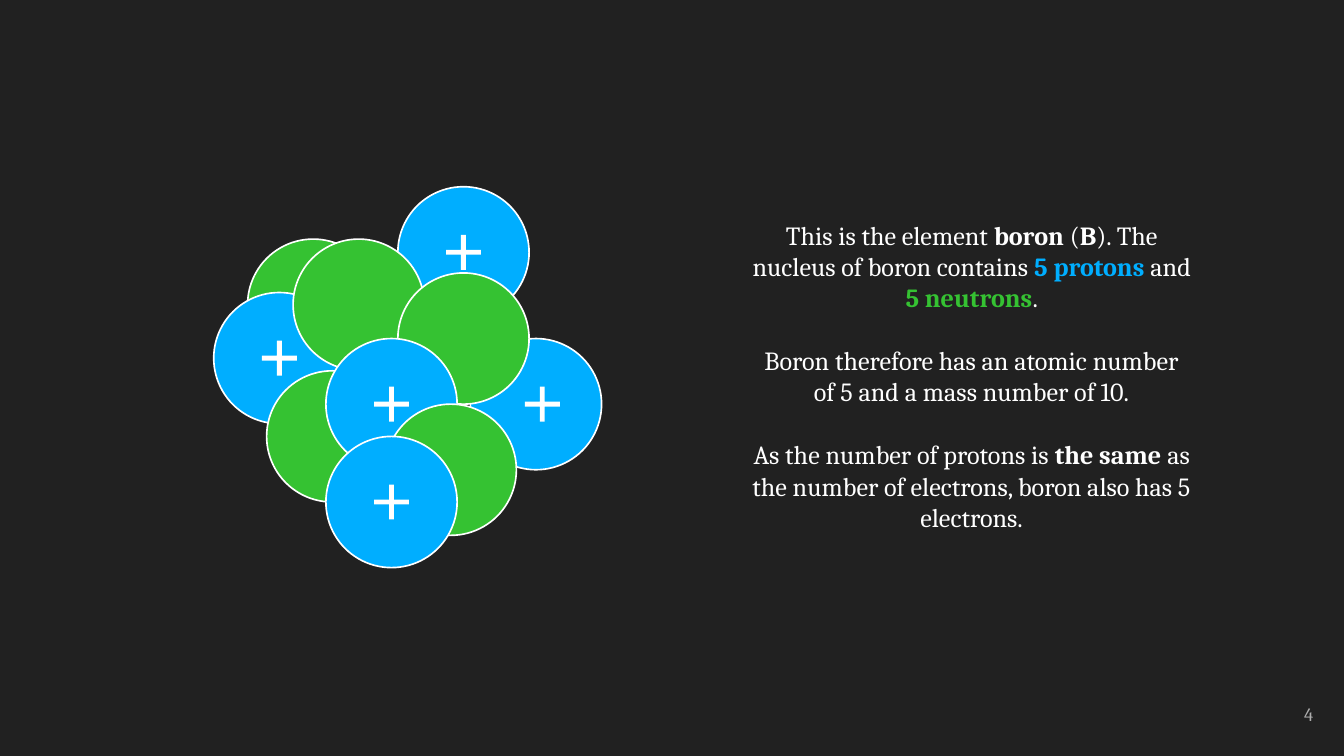
"""Build the slide that explains the nucleus of boron."""
from pptx import Presentation
from pptx import util as u
from pptx.dml import color
from pptx.enum import shapes, text

FONT = "Cambria"
WHITE, GREY, DARK = "FFFFFF", "ADADAD", "212121"
PROTON, NEUTRON = "00AEFF", "35C232"
DIAMETER, PLUS = 2.48, 0.66

PARTICLES = [
    (0.64, 0.99, NEUTRON, 0),
    (3.48, 0, PROTON, 0),
    (0, 2, PROTON, 0),
    (1.5, 0.99, NEUTRON, 0),
    (1, 3.48, NEUTRON, 0),
    (4.85, 2.87, PROTON, 0.12),
    (3.48, 1.63, NEUTRON, 0),
    (2.12, 2.87, PROTON, 0),
    (3.24, 4.11, NEUTRON, 0),
    (2.12, 4.72, PROTON, 0),
]

PARAGRAPHS = [
    [("This is the element ", WHITE, False), ("boron ", WHITE, True),
     ("(", WHITE, False), ("B", WHITE, True),
     ("). The nucleus of boron contains ", WHITE, False),
     ("5 protons ", PROTON, True), ("and ", WHITE, False),
     ("5 neutrons", NEUTRON, True), (".", WHITE, False)],
    [("Boron therefore has an atomic number of 5 and a mass number of 10.",
      WHITE, False)],
    [("As the number of protons is ", WHITE, False),
     ("the same ", WHITE, True),
     ("as the number of electrons, boron also has 5 electrons.",
      WHITE, False)],
]


def rgb(value):
    """Turn a hex string into a colour."""
    return color.RGBColor.from_string(value)


def add_solid(s, kind, x, y, size, fill):
    """Add a filled square-sized shape without line or shadow."""
    sp = s.shapes.add_shape(kind, u.Cm(x), u.Cm(y), u.Cm(size), u.Cm(size))
    sp.shadow.inherit = False
    sp.fill.solid()
    sp.fill.fore_color.rgb = rgb(fill)
    sp.line.fill.background()
    return sp


def add_nucleus(s, left, top):
    """Stack the particles from back to front, with a plus on each proton."""
    inset = (DIAMETER - PLUS) / 2
    for dx, dy, fill, shift in PARTICLES:
        x, y = left + dx, top + dy
        sp = add_solid(s, shapes.MSO_SHAPE.OVAL, x, y, DIAMETER, fill)
        sp.line.color.rgb = rgb(WHITE)
        sp.line.width = u.Pt(0.87)
        if fill == PROTON:
            plus = add_solid(s, shapes.MSO_SHAPE.CROSS,
                             x + inset + shift, y + inset, PLUS, WHITE)
            plus.adjustments[0] = 0.43


def add_text(s, left, top, width, height, paragraphs, size, align, anchor):
    """Add a text box with one paragraph for each list of runs."""
    box = s.shapes.add_textbox(u.Cm(left), u.Cm(top), u.Cm(width), u.Cm(height))
    tf = box.text_frame
    tf.word_wrap = True
    tf.vertical_anchor = anchor
    tf.margin_left = tf.margin_right = u.Cm(0.25)
    tf.margin_top = tf.margin_bottom = u.Cm(0.25)
    for i, runs in enumerate(paragraphs):
        p = tf.add_paragraph() if i else tf.paragraphs[0]
        p.alignment = align
        p.space_before = u.Pt(1.2 * size if i else 0)
        for words, fill, bold in runs:
            r = p.add_run()
            r.text = words
            r.font.name = FONT
            r.font.size = u.Pt(size)
            r.font.bold = bold
            r.font.color.rgb = rgb(fill)


def main():
    """Build and save the slide."""
    prs = Presentation()
    prs.slide_width, prs.slide_height = u.Cm(25.4), u.Cm(14.29)
    s = prs.slides.add_slide(prs.slide_layouts[6])
    s.background.fill.solid()
    s.background.fill.fore_color.rgb = rgb(DARK)
    add_text(s, 23.55, 12.95, 1.52, 1.09, [[("4", GREY, False)]], 10,
             text.PP_ALIGN.RIGHT, text.MSO_ANCHOR.MIDDLE)
    add_nucleus(s, 4.04, 3.53)
    add_text(s, 13.97, 3.89, 8.79, 6.5, PARAGRAPHS, 14,
             text.PP_ALIGN.CENTER, text.MSO_ANCHOR.TOP)
    prs.save("out.pptx")


if __name__ == "__main__":
    main()
